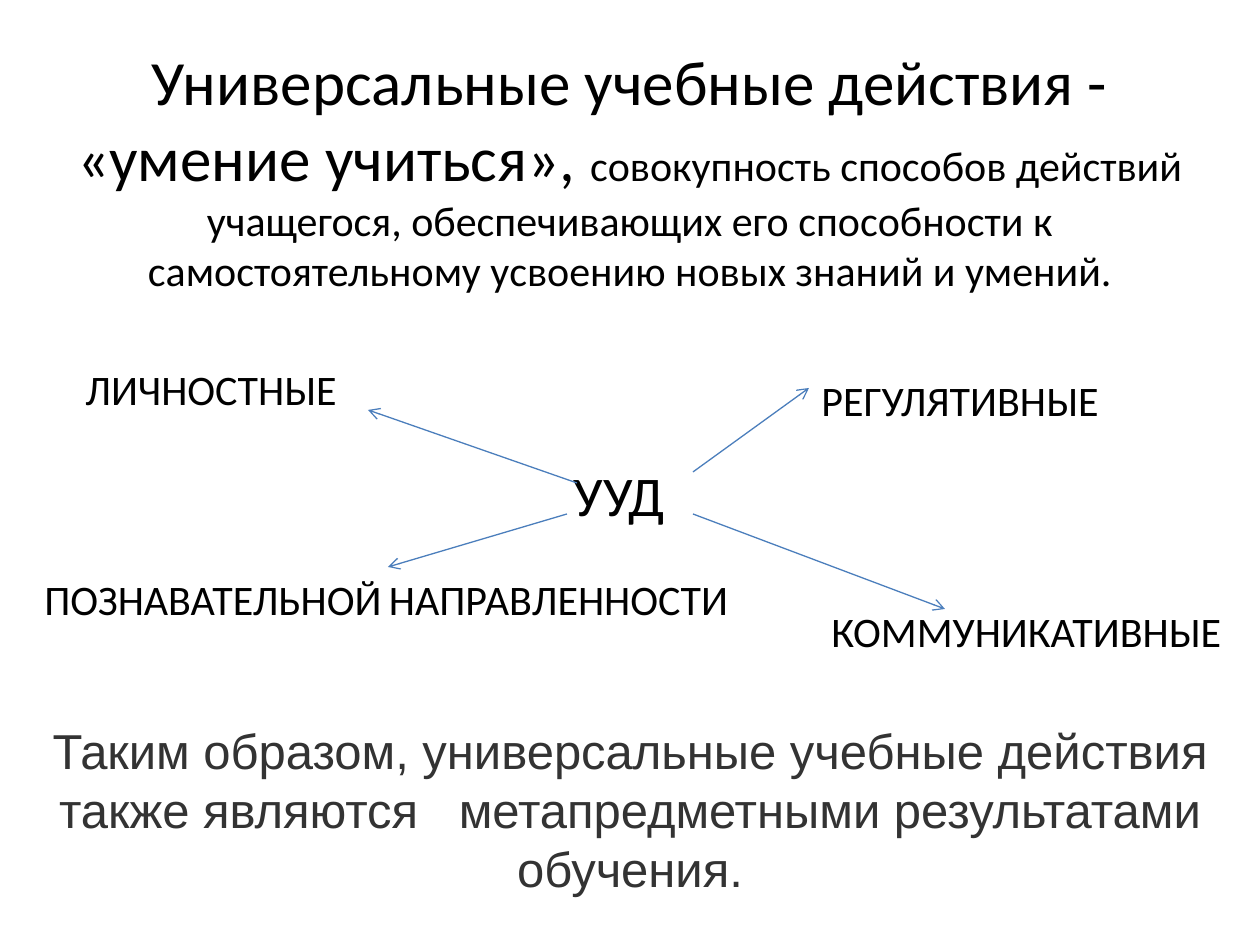
from lxml import etree
from pptx import Presentation
from pptx.dml.color import RGBColor
from pptx.enum.shapes import MSO_CONNECTOR
from pptx.enum.text import MSO_ANCHOR, MSO_AUTO_SIZE, PP_ALIGN
from pptx.oxml.ns import qn
from pptx.util import Pt

PX = 914400 // 126
BLACK = RGBColor(0x00, 0x00, 0x00)
GRAY = RGBColor(0x33, 0x33, 0x33)
BLUE = RGBColor(0x4B, 0x7E, 0xBC)
CENTER = PP_ALIGN.CENTER
MIDDLE, TOP = MSO_ANCHOR.MIDDLE, MSO_ANCHOR.TOP
STRAIGHT = MSO_CONNECTOR.STRAIGHT
NO_FIT = MSO_AUTO_SIZE.NONE


def place(shape, left, top, width, height):
    shape.left, shape.top = left * PX, top * PX
    shape.width, shape.height = width * PX, height * PX


def write(frame, spans, font_name="Calibri", color=BLACK):
    para = frame.paragraphs[0]
    para.font.name = font_name
    para.font.color.rgb = color
    for text, size in spans:
        span = para.add_run()
        span.text = text
        span.font.size = Pt(size)
    return para


deck = Presentation()
deck.slide_width, deck.slide_height = 1260 * PX, 945 * PX
page = deck.slides.add_slide(deck.slide_layouts[1])

# Definition in the title
title = page.shapes.title
place(title, 63, 38, 1134, 246)
title.text_frame.auto_size = NO_FIT
title.text_frame.vertical_anchor = MIDDLE
title.text_frame.margin_top = 22 * PX
write(title.text_frame, [
    ("Универсальные учебные действия - «умение учиться», ", 36),
    ("совокупность способов действий учащегося, обеспечивающих его "
     "способности к самостоятельному усвоению новых знаний и умений.", 24),
]).alignment = CENTER

# Centre of the scheme in the body, without a bullet
body = page.placeholders[1]
place(body, 42, 294, 1155, 551)
body.text_frame.auto_size = NO_FIT
body.text_frame.vertical_anchor = TOP
body.text_frame.margin_top = 167 * PX
center = write(body.text_frame, [("УУД", 32)])
center.alignment = CENTER
center.space_before = Pt(0)
properties = center._p.get_or_add_pPr()
properties.set("marL", "0")
properties.set("indent", "0")
bullet = etree.Element(qn("a:buNone"))
properties.find(qn("a:spcBef")).addnext(bullet)

# Kinds of actions: label box, then the arrow leading to it
branches = [
    ([("ЛИЧНОСТНЫЕ", 24)], (73, 357, 280, 63), (577, 483, 368, 410)),
    ([("РЕГУЛЯТИВНЫЕ", 24)], (809, 368, 306, 63), (693, 472, 809, 388)),
    ([("ПОЗНАВАТЕЛЬНОЙ", 24), (" ", 18), ("НАПРАВЛЕННОСТИ", 24)],
     (32, 567, 716, 63), (567, 514, 388, 567)),
    ([("КОММУНИКАТИВНЫЕ", 24)], (819, 599, 420, 63), (693, 514, 945, 609)),
]
for spans, area, ends in branches:
    arrow = page.shapes.add_connector(STRAIGHT, *[end * PX for end in ends])
    arrow.line.color.rgb = BLUE
    arrow.line.width = Pt(0.75)
    etree.SubElement(arrow.line._get_or_add_ln(), qn("a:tailEnd"), type="arrow")
    etree.SubElement(arrow._element.spPr, qn("a:effectLst"))

    label = page.shapes.add_textbox(*[length * PX for length in area])
    label.text_frame.word_wrap = False
    write(label.text_frame, spans)

# Conclusion
conclusion = page.shapes.add_textbox(0, 714 * PX, 1260 * PX, 190 * PX)
conclusion.text_frame.word_wrap = True
conclusion.text_frame.vertical_anchor = MIDDLE
write(conclusion.text_frame, [
    ("Таким образом, универсальные учебные действия также являются "
     "  метапредметными результатами обучения.".replace("  ", "  ", 1).lstrip(" "), 28),
], "Arial", GRAY).alignment = CENTER

deck.save("out.pptx")
